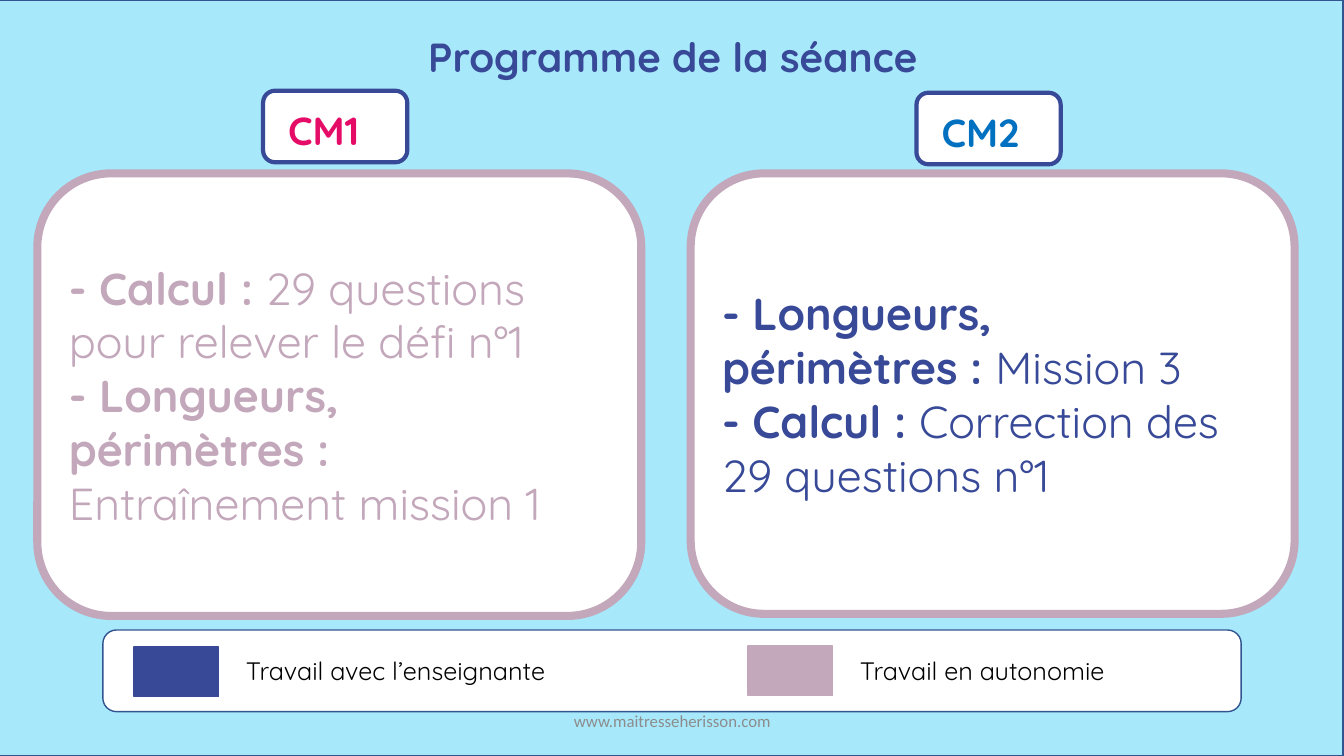
from dataclasses import dataclass

import pptx
import pptx.dml.color
import pptx.enum.shapes
import pptx.enum.text
import pptx.util
from pptx.dml.color import RGBColor
from pptx.util import Inches

SKY = RGBColor(0xA7, 0xE8, 0xFB)
FRAME = RGBColor(0x32, 0x54, 0x91)
NAVY = RGBColor(0x37, 0x49, 0x97)
MAUVE = RGBColor(0xC3, 0xA7, 0xBA)
PINK = RGBColor(0xE5, 0x0C, 0x67)
BLUE = RGBColor(0x00, 0x70, 0xC0)
GREY = RGBColor(0x8C, 0x8C, 0x8C)
WHITE = RGBColor(0xFF, 0xFF, 0xFF)
BLACK = RGBColor(0x00, 0x00, 0x00)

RECT = pptx.enum.shapes.MSO_SHAPE.RECTANGLE
ROUNDED = pptx.enum.shapes.MSO_SHAPE.ROUNDED_RECTANGLE
LEFT = pptx.enum.text.PP_ALIGN.LEFT
CENTER = pptx.enum.text.PP_ALIGN.CENTER
TOP = pptx.enum.text.MSO_ANCHOR.TOP
MIDDLE = pptx.enum.text.MSO_ANCHOR.MIDDLE


@dataclass(frozen=True)
class Area:
    left: float
    top: float
    width: float
    height: float

    def lengths(self) -> list[int]:
        return [Inches(n) for n in (self.left, self.top, self.width, self.height)]


@dataclass(frozen=True)
class Activity:
    subject: str
    task: str


@dataclass(frozen=True)
class Group:
    name: str
    name_color: RGBColor
    tag: Area
    panel: Area
    text_color: RGBColor
    activities: tuple[Activity, ...]


@dataclass(frozen=True)
class LegendEntry:
    label: str
    color: RGBColor
    left: float
    top: float


GROUPS = (
    Group("CM1", PINK, Area(2.61, 0.9, 1.43, 0.71), Area(0.37, 1.72, 5.99, 4.39), MAUVE, (
        Activity("- Calcul : ", "29 questions pour relever le défi n°1"),
        Activity("- Longueurs, périmètres : ", "Entraînement mission 1"),
    )),
    Group("CM2", BLUE, Area(9.09, 0.92, 1.43, 0.71), Area(6.85, 1.72, 5.99, 4.37), NAVY, (
        Activity("- Longueurs, périmètres : ", "Mission 3"),
        Activity("- Calcul : ", "Correction des 29 questions n°1"),
    )),
)
LEGEND = (
    LegendEntry("Travail avec l’enseignante", NAVY, 1.33, 6.42),
    LegendEntry("Travail en autonomie", MAUVE, 7.42, 6.41),
)


def add_box(slide, kind, area: Area, fill: RGBColor, line: RGBColor, weight: float = 1):
    box = slide.shapes.add_shape(kind, *area.lengths())
    box.shadow.inherit = False
    box.fill.solid()
    box.fill.fore_color.rgb = fill
    box.line.color.rgb = line
    box.line.width = pptx.util.Pt(weight)
    return box


def style(font, size: float, color: RGBColor, bold: bool = False,
          name: str = "Quicksand") -> None:
    font.name = name
    font.size = pptx.util.Pt(size)
    font.bold = bold
    font.color.rgb = color


def write_line(shape, text: str, size: float, color: RGBColor, bold: bool = False,
               name: str = "Quicksand", align=LEFT, anchor=TOP) -> None:
    frame = shape.text_frame
    frame.text = text
    frame.word_wrap = True
    frame.auto_size = pptx.enum.text.MSO_AUTO_SIZE.NONE
    frame.vertical_anchor = anchor
    para = frame.paragraphs[0]
    para.alignment = align
    style(para.runs[0].font, size, color, bold, name)


def add_label(slide, area: Area, text: str, size: float, color: RGBColor, **options) -> None:
    write_line(slide.shapes.add_textbox(*area.lengths()), text, size, color, **options)


def add_group(slide, group: Group) -> None:
    """Draw a class's name tag and its panel of activities."""
    add_box(slide, ROUNDED, group.tag, WHITE, NAVY, 3)
    name_area = Area(group.tag.left + 0.15, group.tag.top + 0.11, 1.1, 0.57)
    add_label(slide, name_area, group.name, 28, group.name_color, bold=True)

    frame = add_box(slide, ROUNDED, group.panel, WHITE, MAUVE, 5.75).text_frame
    frame.word_wrap = True
    frame.vertical_anchor = MIDDLE
    for index, activity in enumerate(group.activities):
        para = frame.add_paragraph() if index else frame.paragraphs[0]
        para.alignment = LEFT
        for text, bold in ((activity.subject, True), (activity.task, False)):
            span = para.add_run()
            span.text = text
            style(span.font, 32, group.text_color, bold)


def add_legend(slide) -> None:
    add_box(slide, ROUNDED, Area(1.02, 6.25, 11.29, 0.81), WHITE, FRAME)
    for entry in LEGEND:
        swatch = Area(entry.left, entry.top, 0.84, 0.49)
        add_box(slide, RECT, swatch, entry.color, entry.color)
        add_label(slide, Area(entry.left + 1.01, 6.45, 3.42, 0.4), entry.label, 18, BLACK)


def add_title(slide) -> None:
    title = slide.shapes.title
    title.left, title.top, title.width, title.height = Area(0.01, 0.27, 13.33, 0.59).lengths()
    write_line(title, "Programme de la séance", 29, NAVY, bold=True, align=CENTER)
    # Bring the title in front of the full-slide backdrop
    title.element.getparent().append(title.element)


def main() -> None:
    deck = pptx.Presentation()
    deck.slide_width, deck.slide_height = Inches(13.33), Inches(7.5)
    slide = deck.slides.add_slide(deck.slide_layouts.get_by_name("Title Only"))
    add_box(slide, RECT, Area(-0.01, 0, 13.33, 7.5), SKY, FRAME)
    add_title(slide)
    for group in GROUPS:
        add_group(slide, group)
    add_legend(slide)
    add_label(slide, Area(4.42, 6.95, 4.5, 0.4), "www.maitresseherisson.com", 12, GREY,
              name="Calibri", align=CENTER, anchor=MIDDLE)
    deck.save("out.pptx")


if __name__ == "__main__":
    main()
